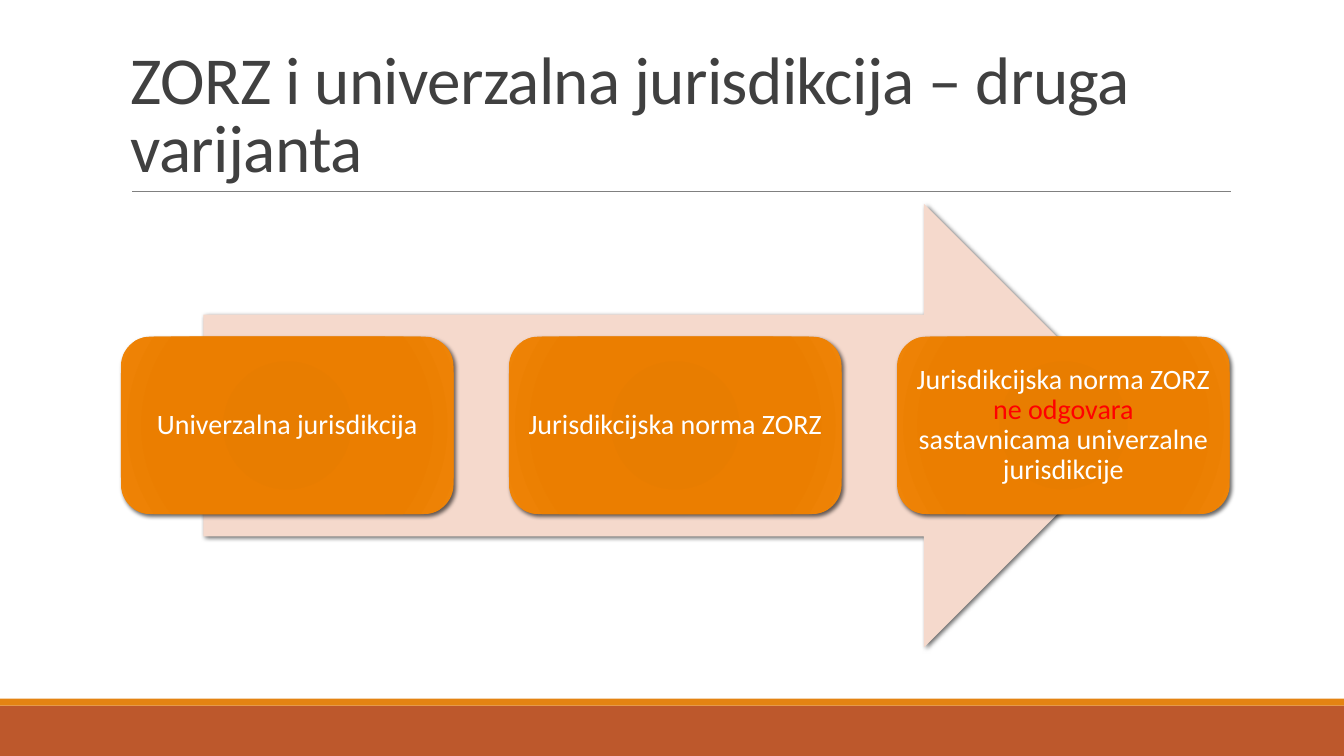
from dataclasses import dataclass

from lxml import etree
from pptx import Presentation
from pptx import util as u
from pptx.dml import color
from pptx.enum import shapes, text
from pptx.oxml import ns


@dataclass(frozen=True)
class Theme:
    font: str = "Calibri"
    title_size: float = 48
    step_size: float = 20
    title: str = "404040"
    rule: str = "808080"
    band: str = "BD582C"
    stripe: str = "E48312"
    arrow: str = "F5D9CC"
    step_text: str = "FFFFFF"
    emphasis: str = "FF0000"
    shadow: str = "000000"
    step_stops: tuple = ((0, "E57B00"), (34, "E87D00"), (70, "EB7E00"), (100, "EF8407"))


@dataclass(frozen=True)
class Frame:
    left: float
    top: float
    width: float
    height: float

    def lengths(self) -> list:
        return [u.Pt(v) for v in (self.left, self.top, self.width, self.height)]


@dataclass(frozen=True)
class Block:
    kind: shapes.MSO_SHAPE
    frame: Frame
    fill: str
    raised: bool = False


@dataclass(frozen=True)
class Phrase:
    words: str
    colour: str


THEME = Theme()
WIDTH, HEIGHT = 960, 540
STEP_LEFT, STEP_PITCH = 86.4, 277.2
STEP_TOP, STEP_WIDTH, STEP_HEIGHT = 240.5, 237.6, 126.7

BLOCKS = [
    Block(shapes.MSO_SHAPE.RECTANGLE, Frame(0, 504, WIDTH, 36), THEME.band),
    Block(shapes.MSO_SHAPE.RECTANGLE, Frame(0, 499, WIDTH, 5), THEME.stripe),
    Block(shapes.MSO_SHAPE.RIGHT_ARROW, Frame(145.2, 145.6, 673.2, 316.8), THEME.arrow, True),
]
STEPS = [
    [Phrase("Univerzalna jurisdikcija", THEME.step_text)],
    [Phrase("Jurisdikcijska norma ZORZ", THEME.step_text)],
    [
        Phrase("Jurisdikcijska norma ZORZ ", THEME.step_text),
        Phrase("ne odgovara ", THEME.emphasis),
        Phrase("sastavnicama univerzalne jurisdikcije", THEME.step_text),
    ],
]


def rgb(value: str) -> color.RGBColor:
    return color.RGBColor.from_string(value)


def child(parent, tag: str, **attributes):
    return etree.SubElement(parent, ns.qn(tag), attributes)


def add_shadow(shape) -> None:
    effects = shape._element.spPr.find(ns.qn("a:effectLst"))
    outer = child(effects, "a:outerShdw", blurRad=str(u.Pt(3)), dist=str(u.Pt(2)),
                  dir="2700000", algn="ctr", rotWithShape="0")
    tint = child(outer, "a:srgbClr", val=THEME.shadow)
    child(tint, "a:alpha", val="60000")


def add_radial_fill(shape, stops: tuple) -> None:
    properties = shape._element.spPr
    gradient = etree.Element(ns.qn("a:gradFill"), rotWithShape="1")
    stop_list = child(gradient, "a:gsLst")
    for percent, value in stops:
        stop = child(stop_list, "a:gs", pos=str(percent * 1000))
        child(stop, "a:srgbClr", val=value)
    centre = child(gradient, "a:path", path="circle")
    child(centre, "a:fillToRect", l="100000", t="100000", r="100000", b="100000")
    properties.replace(properties.find(ns.qn("a:solidFill")), gradient)


def add_block(slide, block: Block):
    shape = slide.shapes.add_shape(block.kind, *block.frame.lengths())
    shape.fill.solid()
    shape.fill.fore_color.rgb = rgb(block.fill)
    shape.line.fill.background()
    shape.shadow.inherit = False
    if block.raised:
        add_shadow(shape)
    return shape


def add_step(slide, index: int, phrases: list[Phrase]) -> None:
    frame = Frame(STEP_LEFT + index * STEP_PITCH, STEP_TOP, STEP_WIDTH, STEP_HEIGHT)
    step = add_block(slide, Block(shapes.MSO_SHAPE.ROUNDED_RECTANGLE, frame,
                                  THEME.step_stops[0][1], True))
    add_radial_fill(step, THEME.step_stops)
    body = step.text_frame
    body.word_wrap = True
    body.vertical_anchor = text.MSO_ANCHOR.MIDDLE
    body.margin_left = body.margin_right = body.margin_top = body.margin_bottom = u.Pt(6)
    label = body.paragraphs[0]
    label.alignment = text.PP_ALIGN.CENTER
    label.line_spacing = 0.9
    label.font.name = THEME.font
    label.font.size = u.Pt(THEME.step_size)
    for phrase in phrases:
        run = label.add_run()
        run.text = phrase.words
        run.font.color.rgb = rgb(phrase.colour)


def add_title(slide, words: str) -> None:
    box = slide.shapes.add_textbox(*Frame(86.4, 22.3, 792, 114.5).lengths())
    body = box.text_frame
    body.word_wrap = True
    body.vertical_anchor = text.MSO_ANCHOR.BOTTOM
    heading = body.paragraphs[0]
    heading.text = words
    heading.line_spacing = 0.85
    heading.font.name = THEME.font
    heading.font.size = u.Pt(THEME.title_size)
    heading.font.color.rgb = rgb(THEME.title)
    heading._p.pPr.find(ns.qn("a:defRPr")).set("spc", "-50")


def add_rule(slide) -> None:
    rule = slide.shapes.add_connector(shapes.MSO_CONNECTOR.STRAIGHT, u.Pt(94.5),
                                      u.Pt(136.8), u.Pt(879), u.Pt(136.8))
    rule.line.color.rgb = rgb(THEME.rule)
    rule.line.width = u.Pt(0.5)
    child(rule._element.spPr, "a:effectLst")


def main() -> None:
    deck = Presentation()
    deck.slide_width, deck.slide_height = u.Pt(WIDTH), u.Pt(HEIGHT)
    slide = deck.slides.add_slide(deck.slide_layouts[6])
    add_rule(slide)
    add_title(slide, "ZORZ i univerzalna jurisdikcija – druga varijanta")
    for block in BLOCKS:
        add_block(slide, block)
    for index, phrases in enumerate(STEPS):
        add_step(slide, index, phrases)
    deck.save("out.pptx")


if __name__ == "__main__":
    main()
